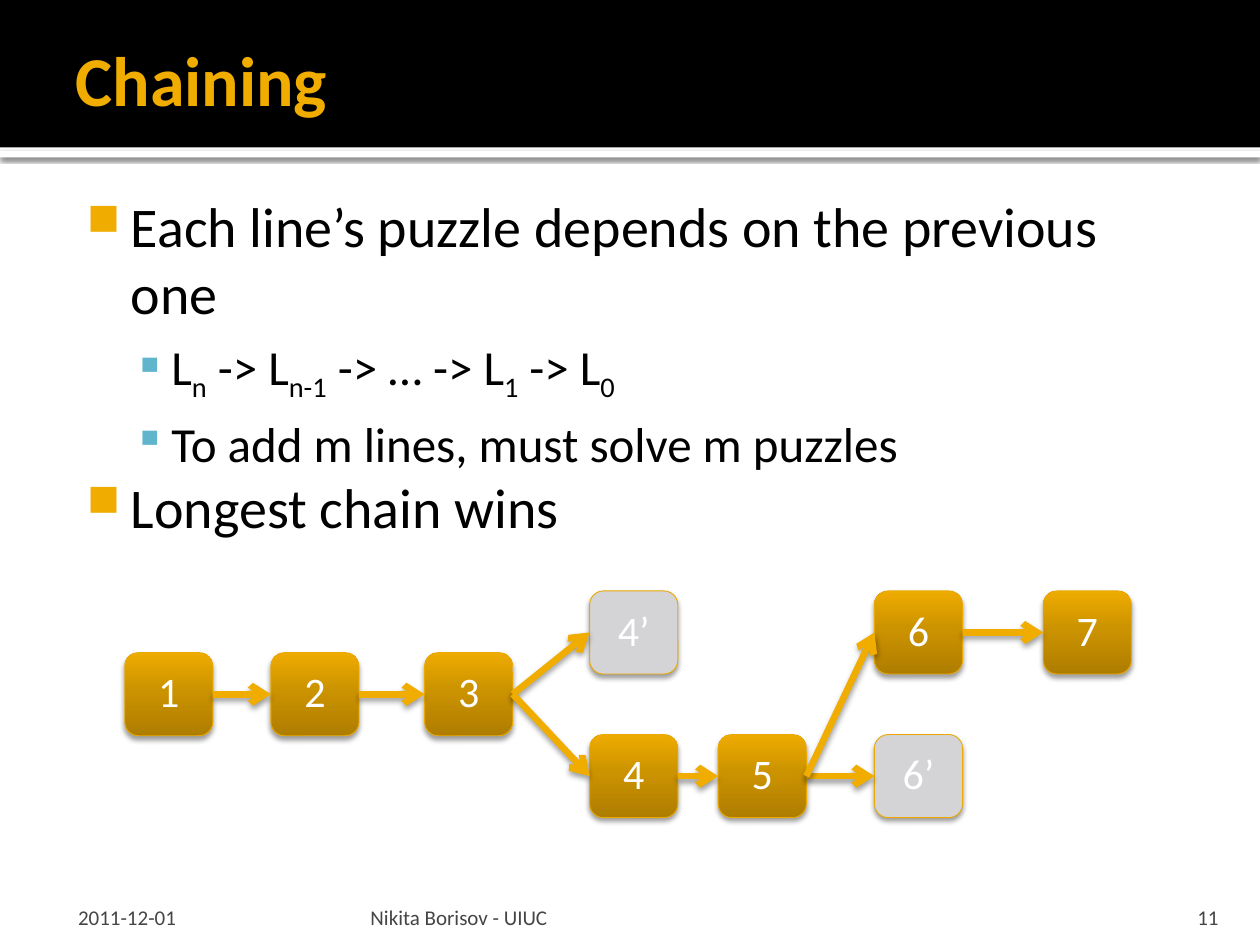
from typing import NamedTuple

from lxml import etree
from pptx import Presentation
from pptx import util as u
from pptx.dml.color import RGBColor
from pptx.enum import shapes, text
from pptx.oxml import parse_xml
from pptx.oxml.ns import nsdecls, qn

COLORS = {"black": "000000", "white": "FFFFFF", "gold": "F0AD00", "edge": "EBA900",
          "blue": "60B5CC", "orphan": "D4D4D6", "footer": "454545"}
GOLD_STOPS = ((0, "AE7D00"), (55, "CC9300"), (100, "EEAB00"))
FONT = "Calibri"
BLOCK_W, BLOCK_H = 0.7, 0.66
TOP, MIDDLE, BOTTOM = 4.69, 5.18, 5.83  # rows of the chain
LEFT_SIDE, RIGHT_SIDE = 1, 3


class Block(NamedTuple):
    label: str
    left: float
    top: float
    orphan: bool = False


class Shadow(NamedTuple):
    opacity: int
    blur: float
    distance: float


class Level(NamedTuple):
    size: int
    margin: float
    indent: float
    before: float
    bullet: str
    bullet_color: str
    bullet_size: int


class Footer(NamedTuple):
    wording: str
    left: float
    width: float
    inset: tuple
    align: text.PP_ALIGN = text.PP_ALIGN.LEFT


BLOCKS = [Block("1", 0.99, MIDDLE), Block("2", 2.15, MIDDLE), Block("3", 3.37, MIDDLE),
          Block("4’", 4.68, TOP, True), Block("4", 4.68, BOTTOM), Block("5", 5.7, BOTTOM),
          Block("6", 6.94, TOP), Block("6’", 6.94, BOTTOM, True), Block("7", 8.28, TOP)]
LINKS = [("1", "2"), ("2", "3"), ("3", "4’"), ("3", "4"),
         ("4", "5"), ("5", "6’"), ("5", "6"), ("6", "7")]

POINT = Level(32, 0.48, -0.35, 0, "■", "gold", 80)
DETAIL = Level(28, 0.8, -0.3, 6, "▪", "blue", 90)
# Every second run of a paragraph is a subscript
BODY = [(POINT, ["Each line’s puzzle depends on the previous one"]),
        (DETAIL, ["L", "n", " -> L", "n-1", " -> … -> L", "1", " -> L", "0"]),
        (DETAIL, ["To add m lines, must solve m puzzles"]),
        (POINT, ["Longest chain wins"])]
FOOTERS = [Footer("2011-12-01", 0.5, 2.33, (0.12, 0.05, 0.05, 0)),
           Footer("Nikita Borisov - UIUC", 2.89, 6.02, (0.05, 0.05, 0.05, 0)),
           Footer("11", 8.97, 0.8, (0.1, 0.05, 0.1, 0), text.PP_ALIGN.RIGHT)]


def rgb(name: str) -> RGBColor:
    return RGBColor.from_string(COLORS[name])


def inches(*lengths: float) -> list:
    return [u.Inches(length) for length in lengths]


def set_shadow(properties, shadow: Shadow) -> None:
    properties.append(parse_xml(
        f'<a:effectLst {nsdecls("a")}><a:outerShdw blurRad="{u.Pt(shadow.blur)}" '
        f'dist="{u.Pt(shadow.distance)}" dir="5400000" rotWithShape="0">'
        f'<a:srgbClr val="{COLORS["black"]}"><a:alpha val="{shadow.opacity * 1000}"/>'
        '</a:srgbClr></a:outerShdw></a:effectLst>'))


def set_frame(frame, anchor, inset: tuple) -> None:
    sides = ("margin_left", "margin_top", "margin_right", "margin_bottom")
    values = dict(zip(sides, inches(*inset)), word_wrap=True,
                  auto_size=text.MSO_AUTO_SIZE.NONE, vertical_anchor=anchor)
    for name, value in values.items():
        setattr(frame, name, value)


def add_run(paragraph, wording: str, size: float, color: str, bold: bool = False):
    run = paragraph.add_run()
    run.text = wording
    for name, value in {"name": FONT, "size": u.Pt(size), "bold": bold}.items():
        setattr(run.font, name, value)
    run.font.color.rgb = rgb(color)
    return run


def add_bar(slide, top: float, height: float, color: str):
    bar = slide.shapes.add_shape(shapes.MSO_SHAPE.RECTANGLE, *inches(0, top, 10, height))
    bar.fill.solid()
    bar.fill.fore_color.rgb = rgb(color)
    bar.line.fill.background()
    return bar


def add_body(slide) -> None:
    frame = slide.shapes.add_textbox(*inches(0.5, 1.42, 9, 5.58)).text_frame
    set_frame(frame, text.MSO_ANCHOR.TOP, (0.06, 0.1, 0.1, 0.05))
    for number, (level, pieces) in enumerate(BODY):
        paragraph = frame.add_paragraph() if number else frame.paragraphs[0]
        paragraph.level = int(level is DETAIL)
        paragraph.space_before = u.Pt(level.before)
        for index, piece in enumerate(pieces):
            run = add_run(paragraph, piece, level.size, "black")
            if index % 2:
                run.font._element.set("baseline", "-25000")
        # Bullet and hanging indent
        properties = paragraph._p.get_or_add_pPr()
        properties.set("marL", str(u.Inches(level.margin)))
        properties.set("indent", str(u.Inches(level.indent)))
        color = etree.SubElement(properties, qn("a:buClr"))
        etree.SubElement(color, qn("a:srgbClr"), val=COLORS[level.bullet_color])
        etree.SubElement(properties, qn("a:buSzPct"), val=str(level.bullet_size * 1000))
        etree.SubElement(properties, qn("a:buChar"), char=level.bullet)


def add_footer(slide, footer: Footer) -> None:
    box = slide.shapes.add_textbox(*inches(footer.left, 7.08, footer.width, 0.3))
    set_frame(box.text_frame, text.MSO_ANCHOR.BOTTOM, footer.inset)
    paragraph = box.text_frame.paragraphs[0]
    paragraph.alignment = footer.align
    add_run(paragraph, footer.wording, 12, "footer")


def add_block(slide, block: Block):
    shape = slide.shapes.add_shape(shapes.MSO_SHAPE.ROUNDED_RECTANGLE,
                                   *inches(block.left, block.top, BLOCK_W, BLOCK_H))
    properties = shape._element.spPr
    if block.orphan:
        shape.fill.solid()
        shape.fill.fore_color.rgb = rgb("orphan")
    else:
        stops = "".join(f'<a:gs pos="{place * 1000}"><a:srgbClr val="{color}"/></a:gs>'
                        for place, color in GOLD_STOPS)
        properties.append(parse_xml(f'<a:gradFill {nsdecls("a")}><a:gsLst>{stops}</a:gsLst>'
                                    '<a:lin ang="16200000" scaled="0"/></a:gradFill>'))
    shape.line.color.rgb = rgb("edge")
    shape.line.width = u.Pt(0.5)
    set_shadow(properties, Shadow(38, 3.1, 2))
    set_frame(shape.text_frame, text.MSO_ANCHOR.MIDDLE, (0.1, 0.05, 0.1, 0.05))
    paragraph = shape.text_frame.paragraphs[0]
    paragraph.alignment = text.PP_ALIGN.CENTER
    paragraph.line_spacing = 0.9
    add_run(paragraph, block.label, 24, "white")
    return shape


def add_link(slide, source, target) -> None:
    link = slide.shapes.add_connector(shapes.MSO_CONNECTOR.STRAIGHT, 0, 0, 0, 0)
    link.begin_connect(source, RIGHT_SIDE)
    link.end_connect(target, LEFT_SIDE)
    link.line.color.rgb = rgb("gold")
    link.line.width = u.Pt(3.78)
    etree.SubElement(link.line._get_or_add_ln(), qn("a:tailEnd"), type="arrow")
    set_shadow(link._element.spPr, Shadow(38, 3.5, 2))


def main() -> None:
    deck = Presentation()
    deck.slide_width, deck.slide_height = inches(10, 7.5)
    slide = deck.slides.add_slide(deck.slide_layouts[5])

    # Header bars, with the title above them
    set_shadow(add_bar(slide, 1.2, 0.05, "white")._element.spPr, Shadow(60, 2.5, 0.8))
    add_bar(slide, 0, 1.17, "black").shadow.inherit = False
    title = slide.shapes.title
    title.left, title.top, title.width, title.height = inches(0.5, 0.08, 9, 1.08)
    set_frame(title.text_frame, text.MSO_ANCHOR.MIDDLE, (0.1, 0.05, 0.05, 0.05))
    title.text_frame.paragraphs[0].alignment = text.PP_ALIGN.LEFT
    add_run(title.text_frame.paragraphs[0], "Chaining", 40, "gold", bold=True)
    slide.shapes._spTree.append(title._element)

    # Bullets and footer
    add_body(slide)
    for footer in FOOTERS:
        add_footer(slide, footer)

    # Chain of blocks
    chain = {block.label: add_block(slide, block) for block in BLOCKS}
    for source, target in LINKS:
        add_link(slide, chain[source], chain[target])

    deck.save("out.pptx")


if __name__ == "__main__":
    main()
